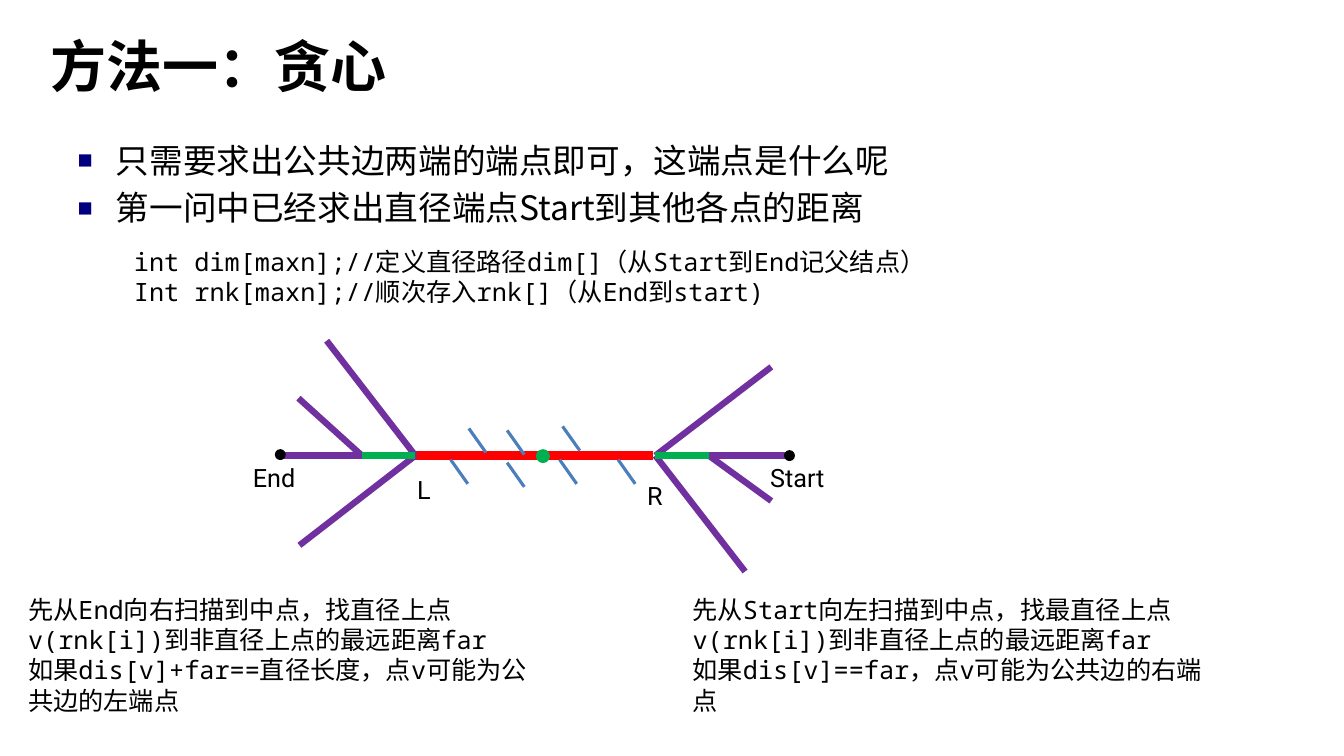
import pptx
import pptx.dml.color
import pptx.enum.shapes
import pptx.enum.text
import pptx.oxml.ns
import pptx.util
from lxml import etree
from pptx.util import Inches, Pt

COLOURS = {
    "text": "000000",
    "bullet": "00007D",
    "shared": "FF0000",
    "branch": "7030A0",
    "diameter": "00B050",
    "twig": "4B7EBC",
}
CJK_FONT = "Noto Sans CJK SC"
CODE_FONT = "Noto Sans Mono"
LABEL_FONT = "Roboto"

AXIS = 4.52
LEFT_FORK, RIGHT_FORK = (4.12, AXIS), (6.5, AXIS)
LEFT_JOINT, RIGHT_JOINT = (3.59, AXIS), (7.03, AXIS)
EDGES = [
    (LEFT_FORK, (6.48, AXIS), "shared", 6),
    (LEFT_FORK, (3.24, 3.38), "branch", 4.5),
    (LEFT_FORK, (2.97, 5.41), "branch", 4.5),
    (LEFT_JOINT, (2.8, AXIS), "branch", 4.5),
    (LEFT_JOINT, (2.96, 3.95), "branch", 4.5),
    (LEFT_FORK, LEFT_JOINT, "diameter", 4.5),
    ((7.65, 3.64), RIGHT_FORK, "branch", 4.5),
    (RIGHT_FORK, (7.39, 5.67), "branch", 4.5),
    ((7.79, AXIS), (7, AXIS), "branch", 4.5),
    ((7.65, 4.97), RIGHT_JOINT, "branch", 4.5),
    (RIGHT_JOINT, RIGHT_FORK, "diameter", 4.5),
]
TWIG_ENDS = [(4.82, 4.49), (5.2, 4.51), (5.75, 4.47),
             (4.64, 4.8), (5.2, 4.83), (5.72, 4.8), (6.3, 4.8)]
TWIG_RUN, TWIG_RISE = 0.17, 0.24
LABELS = [
    ("Start", 7.54, 4.54, 0.75),
    ("End", 2.41, 4.54, 0.75),
    ("L", 4.04, 4.66, 0.37),
    ("R", 6.32, 4.72, 0.37),
]
NODES = [
    (2.74, 4.47, 0.08, "text"),
    (7.79, 4.48, 0.08, "text"),
    (5.33, 4.47, 0.11, "diameter"),
]
POINTS = ["只需要求出公共边两端的端点即可，这端点是什么呢",
          "第一问中已经求出直径端点Start到其他各点的距离"]
CODE_BLOCKS = [
    (0.18, 5.83, 5.29, 1.31,
     ["先从End向右扫描到中点，找直径上点v(rnk[i])到非直径上点的最远距离far",
      "如果dis[v]+far==直径长度，点v可能为公共边的左端点"]),
    (6.77, 5.83, 5.29, 1.31,
     ["先从Start向左扫描到中点，找最直径上点v(rnk[i])到非直径上点的最远距离far",
      "如果dis[v]==far，点v可能为公共边的右端点"]),
    (1.23, 2.37, 8.48, 0.71,
     ["int dim[maxn];//定义直径路径dim[]（从Start到End记父结点）",
      "Int rnk[maxn];//顺次存入rnk[]（从End到start)"]),
]


def rgb(name):
    return pptx.dml.color.RGBColor.from_string(COLOURS[name])


def add_element(parent, tag, **attributes):
    return etree.SubElement(parent, pptx.oxml.ns.qn(tag), attributes)


def place(shape, left, top, width, height):
    shape.left, shape.top = Inches(left), Inches(top)
    shape.width, shape.height = Inches(width), Inches(height)


def add_run(paragraph, text, font, size, bold=False):
    run = paragraph.add_run()
    run.text = text
    run.font.name = font
    run.font.size = Pt(size)
    run.font.bold = bold
    run.font.color.rgb = rgb("text")
    add_element(run.font._element, "a:ea", typeface=CJK_FONT)


def paragraphs(frame, count):
    for _ in range(count - 1):
        frame.add_paragraph()
    return frame.paragraphs


def add_square_bullet(paragraph):
    properties = paragraph._p.get_or_add_pPr()
    properties.set("marL", str(Inches(0.38)))
    properties.set("indent", str(-Inches(0.38)))
    colour = add_element(properties, "a:buClr")
    add_element(colour, "a:srgbClr", val=COLOURS["bullet"])
    add_element(properties, "a:buSzPct", val="75000")
    add_element(properties, "a:buFont", typeface="Arial")
    add_element(properties, "a:buChar", char="■")


def fill_title(title):
    place(title, 0.4, 0.18, 12.4, 0.94)
    frame = title.text_frame
    frame.auto_size = pptx.enum.text.MSO_AUTO_SIZE.NONE
    frame.vertical_anchor = pptx.enum.text.MSO_ANCHOR.MIDDLE
    heading = frame.paragraphs[0]
    heading.alignment = pptx.enum.text.PP_ALIGN.LEFT
    add_run(heading, "方法一：贪心", "Arial", 40, bold=True)


def fill_points(body):
    place(body, 0.67, 1.31, 11.39, 0.89)
    frame = body.text_frame
    frame.auto_size = pptx.enum.text.MSO_AUTO_SIZE.NONE
    frame.margin_top = Inches(0.08)
    for index, (point, text) in enumerate(
            zip(paragraphs(frame, len(POINTS)), POINTS)):
        add_square_bullet(point)
        point.line_spacing = Pt(28.8)
        point.space_before = Pt(4.8 if index else 0)
        add_run(point, text, CJK_FONT, 24)


def add_line(slide, start, end, colour, width):
    line = slide.shapes.add_connector(
        pptx.enum.shapes.MSO_CONNECTOR.STRAIGHT,
        *(Inches(value) for value in (*start, *end)))
    line.line.color.rgb = rgb(colour)
    line.line.width = Pt(width)
    add_element(line._element.spPr, "a:effectLst")


def add_node(slide, left, top, size, colour):
    node = slide.shapes.add_shape(
        pptx.enum.shapes.MSO_SHAPE.OVAL,
        Inches(left), Inches(top), Inches(size), Inches(size))
    node.shadow.inherit = False
    node.fill.solid()
    node.fill.fore_color.rgb = rgb(colour)
    node.line.color.rgb = rgb(colour)
    node.line.width = Pt(2)


def add_label(slide, text, left, top, width):
    label = slide.shapes.add_textbox(
        Inches(left), Inches(top), Inches(width), Inches(0.4))
    label.text_frame.word_wrap = False
    add_run(label.text_frame.paragraphs[0], text, LABEL_FONT, 18)


def add_code_block(slide, left, top, width, height, lines):
    block = slide.shapes.add_textbox(
        Inches(left), Inches(top), Inches(width), Inches(height))
    frame = block.text_frame
    frame.word_wrap = True
    frame.margin_top = Inches(0.07)
    for paragraph, line in zip(paragraphs(frame, len(lines)), lines):
        paragraph.line_spacing = Pt(21.5)
        add_run(paragraph, line, CODE_FONT, 18)


def main():
    presentation = pptx.Presentation()
    presentation.slide_width = Inches(13.33)
    presentation.slide_height = Inches(7.5)
    slide = presentation.slides.add_slide(presentation.slide_layouts[1])
    fill_title(slide.shapes.title)
    fill_points(slide.placeholders[1])
    for edge in EDGES:
        add_line(slide, *edge)
    for x, y in TWIG_ENDS:
        add_line(slide, (x, y), (x - TWIG_RUN, y - TWIG_RISE), "twig", 2.25)
    for node in NODES:
        add_node(slide, *node)
    for label in LABELS:
        add_label(slide, *label)
    for block in CODE_BLOCKS:
        add_code_block(slide, *block)
    presentation.save("out.pptx")


if __name__ == "__main__":
    main()
